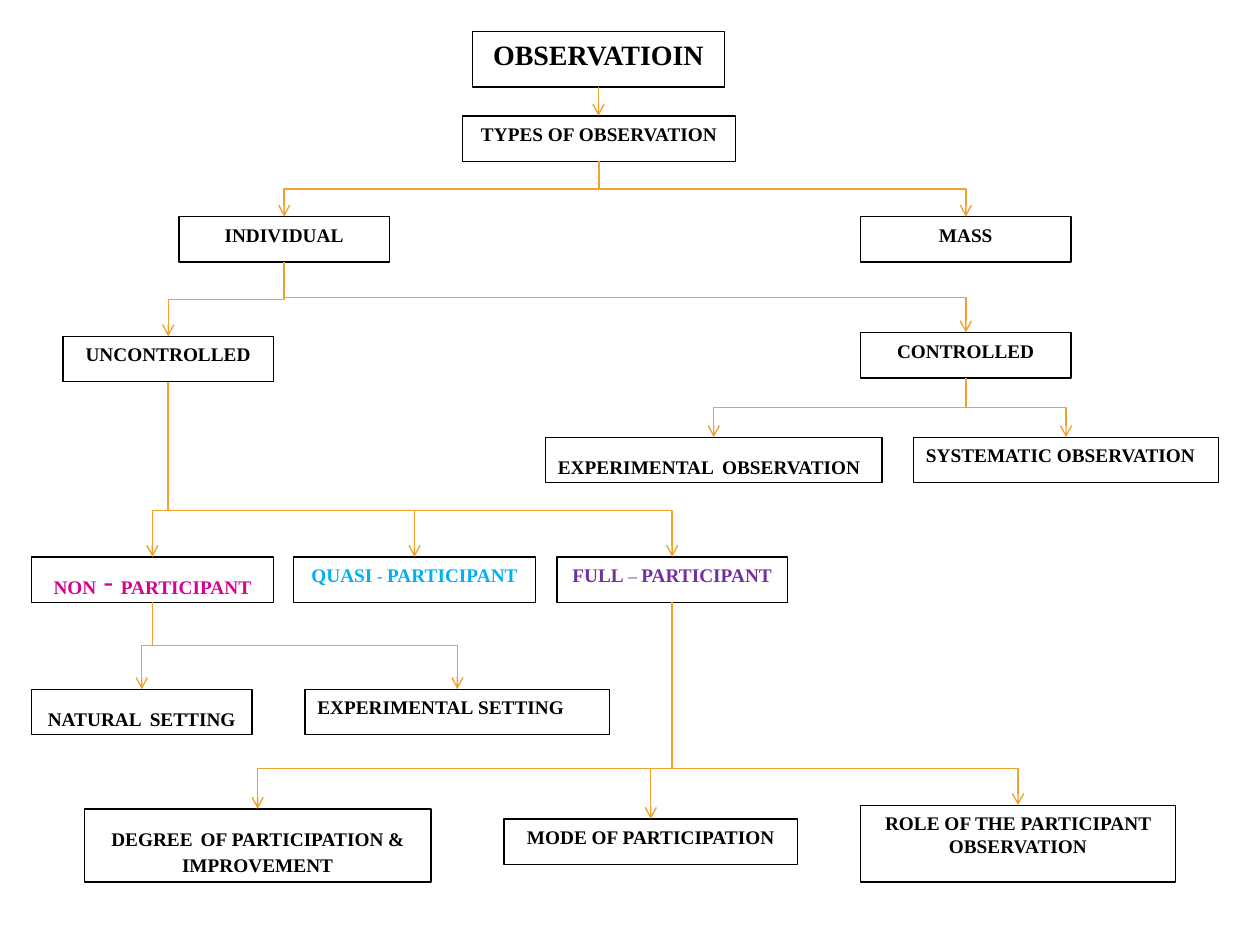
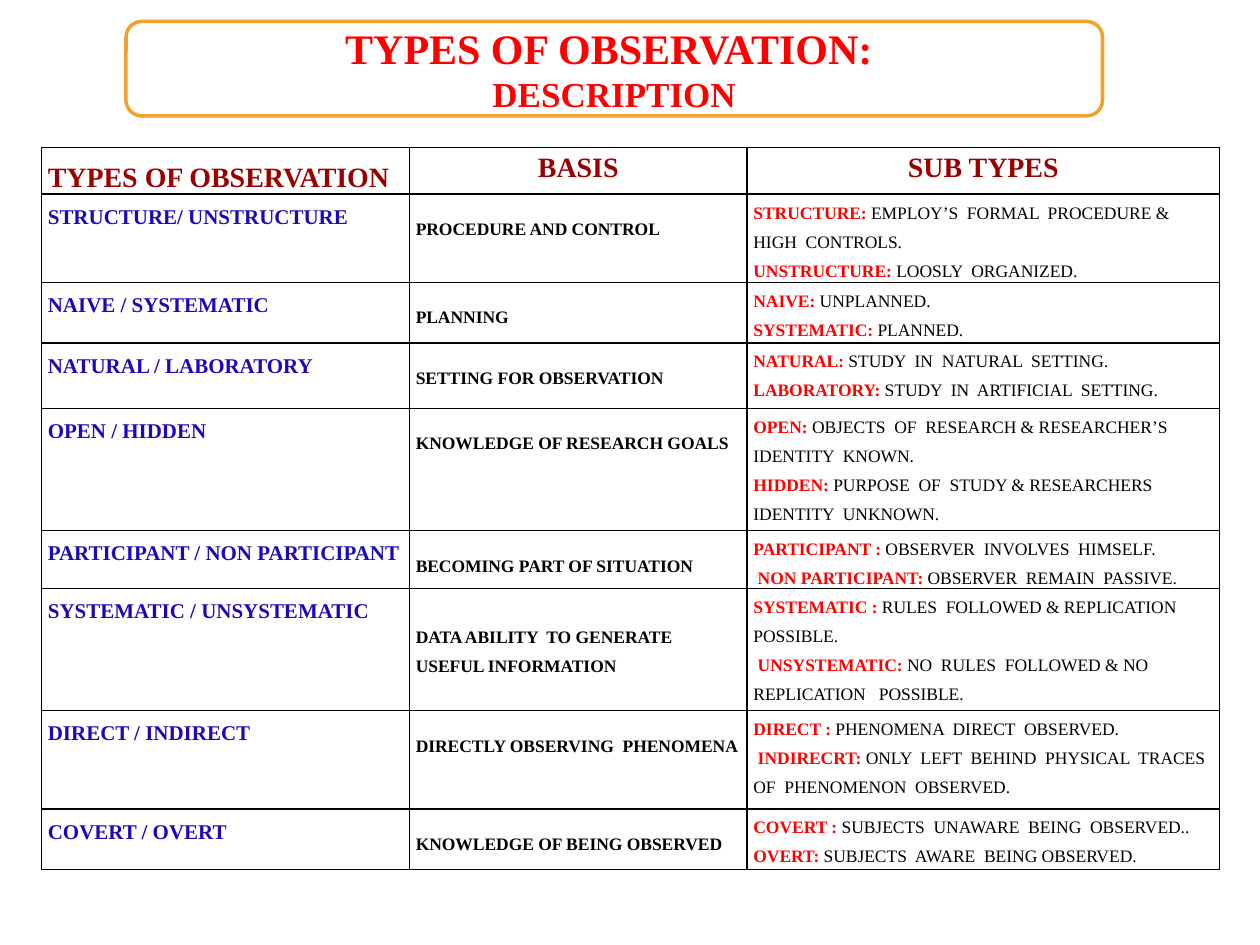
from lxml import etree
from pptx import Presentation
from pptx.dml.color import RGBColor
from pptx.enum.shapes import MSO_CONNECTOR as Connector, MSO_SHAPE as Shape
from pptx.enum.text import MSO_ANCHOR as Anchor, PP_ALIGN as Align
from pptx.oxml.ns import qn
from pptx.util import Inches, Pt

# Shared look
SERIF, SANS = "Times New Roman", "Roboto"
COLORS = {
    "black": "000000", "white": "FFFFFF", "orange": "F0A22E", "pink": "D60093",
    "cyan": "00B0F0", "purple": "7030A0", "maroon": "990000", "blue": "1D08B8",
    "red": "FF0000",
}

# Chart content: a run is a string or (text, format)
WIDE = {"size": 18, "font": SANS, "bold": False}
THIN = {"size": 10, "bold": False}
BOX_HEIGHT = 0.36
# name: left, top, width, runs, format of the box
BOXES = {
    "observation": (3.75, 0.25, 2, ["OBSERVATIOIN"], {"size": 16, "height": 0.44}),
    "types": (3.67, 0.92, 2.17, ["TYPES OF OBSERVATION"], {}),
    "individual": (1.42, 1.72, 1.67, ["INDIVIDUAL"], {}),
    "mass": (6.83, 1.72, 1.67, ["MASS"], {}),
    "uncontrolled": (0.5, 2.67, 1.67, ["UNCONTROLLED"], {}),
    "controlled": (6.83, 2.64, 1.67, ["CONTROLLED"], {}),
    "experimental": (4.33, 3.47, 2.67,
                     ["EXPERIMENTAL", (" ", WIDE), "OBSERVATION"],
                     {"align": Align.LEFT}),
    "systematic": (7.25, 3.47, 2.42, ["SYSTEMATIC OBSERVATION"],
                   {"align": Align.LEFT}),
    "non": (0.25, 4.42, 1.92, ["NON", (" - ", WIDE), "PARTICIPANT"],
            {"color": "pink"}),
    "quasi": (2.33, 4.42, 1.92, ["QUASI", (" - ", THIN), "PARTICIPANT"],
              {"color": "cyan"}),
    "full": (4.42, 4.42, 1.83, ["FULL", (" – ", THIN), "PARTICIPANT"],
             {"color": "purple"}),
    "natural": (0.25, 5.47, 1.75, ["NATURAL", (" ", WIDE), "SETTING"], {}),
    "setting": (2.42, 5.47, 2.42, ["EXPERIMENTAL", (" ", THIN), "SETTING"],
                {"align": Align.LEFT}),
    "degree": (0.67, 6.42, 2.75,
               ["DEGREE", (" ", WIDE), "OF", (" ", THIN), "PARTICIPATION",
                (" ", THIN), "&", (" ", WIDE), "IMPROVEMENT"], {"height": 0.58}),
    "mode": (4, 6.5, 2.33, ["MODE OF PARTICIPATION"], {}),
    "role": (6.83, 6.39, 2.5, ["ROLE OF THE PARTICIPANT OBSERVATION"],
             {"height": 0.61}),
}
# parent, children, height of the shared bend (None: halfway)
BRANCHES = [
    ("observation", ["types"], None),
    ("types", ["mass", "individual"], None),
    ("individual", ["controlled", "uncontrolled"], None),
    ("uncontrolled", ["full", "non", "quasi"], 4.05),
    ("controlled", ["systematic", "experimental"], None),
    ("non", ["setting", "natural"], None),
    ("full", ["mode", "degree", "role"], 6.1),
]

# Table content
TITLE_LINES = [("TYPES OF OBSERVATION: ", 24), ("DESCRIPTION", 20)]
HEADINGS = [("TYPES OF OBSERVATION", Align.LEFT, 1.5),
            ("BASIS", Align.CENTER, 1.15), ("SUB TYPES", Align.CENTER, 1.15)]
COLUMN_WIDTHS = [2.92, 2.68, 3.75]
HEADING_HEIGHT = 0.37
# row height, type, basis lines, (sub type, meaning) pairs
ROWS = [
    (0.7, "STRUCTURE/ UNSTRUCTURE", ["PROCEDURE AND CONTROL"],
     [("STRUCTURE: ", "EMPLOY’S  FORMAL  PROCEDURE & HIGH  CONTROLS."),
      ("UNSTRUCTURE: ", "LOOSLY  ORGANIZED.")]),
    (0.48, "NAIVE / SYSTEMATIC", ["PLANNING"],
     [("NAIVE: ", "UNPLANNED."), ("SYSTEMATIC: ", "PLANNED.")]),
    (0.52, "NATURAL / LABORATORY", ["SETTING FOR OBSERVATION"],
     [("NATURAL: ", "STUDY  IN  NATURAL  SETTING."),
      ("LABORATORY: ", "STUDY  IN  ARTIFICIAL  SETTING.")]),
    (0.97, "OPEN / HIDDEN", ["KNOWLEDGE OF RESEARCH GOALS"],
     [("OPEN: ", "OBJECTS  OF  RESEARCH & RESEARCHER’S IDENTITY  KNOWN."),
      ("HIDDEN: ", "PURPOSE  OF  STUDY & RESEARCHERS IDENTITY  UNKNOWN.")]),
    (0.45, "PARTICIPANT / NON PARTICIPANT", ["BECOMING PART OF SITUATION"],
     [("PARTICIPANT : ", "OBSERVER  INVOLVES  HIMSELF."),
      (" NON PARTICIPANT: ", "OBSERVER  REMAIN  PASSIVE.")]),
    (0.97, "SYSTEMATIC / UNSYSTEMATIC",
     ["DATA ABILITY  TO GENERATE", "USEFUL INFORMATION"],
     [("SYSTEMATIC : ", "RULES  FOLLOWED & REPLICATION POSSIBLE."),
      (" UNSYSTEMATIC: ", "NO  RULES  FOLLOWED & NO REPLICATION   POSSIBLE.")]),
    (0.78, "DIRECT / INDIRECT", ["DIRECTLY OBSERVING  PHENOMENA"],
     [("DIRECT : ", "PHENOMENA  DIRECT  OBSERVED."),
      (" INDIRECRT: ",
       "ONLY  LEFT  BEHIND  PHYSICAL  TRACES OF  PHENOMENON  OBSERVED.")]),
    (0.48, "COVERT / OVERT", ["KNOWLEDGE OF BEING OBSERVED"],
     [("COVERT : ", "SUBJECTS  UNAWARE  BEING  OBSERVED.."),
      ("OVERT: ", "SUBJECTS  AWARE  BEING OBSERVED.")]),
]


def rgb(name):
    return RGBColor.from_string(COLORS[name])


def write(frame, paragraphs, align=Align.LEFT, spacing=None, **base):
    """Fill a text frame; each paragraph is a list of runs."""
    for index, runs in enumerate(paragraphs):
        paragraph = frame.add_paragraph() if index else frame.paragraphs[0]
        paragraph.alignment = align
        if spacing:
            paragraph.line_spacing = spacing
        for item in runs:
            text, own = (item, {}) if isinstance(item, str) else item
            look = {"size": 11, "font": SERIF, "color": "black", "bold": True,
                    **base, **own}
            run = paragraph.add_run()
            run.text = text
            run.font.size = Pt(look["size"])
            run.font.name = look["font"]
            run.font.bold = look["bold"]
            run.font.color.rgb = rgb(look["color"])


def add_panel(slide, kind, left, top, width, height, line, weight):
    shape = slide.shapes.add_shape(kind, *map(Inches, (left, top, width, height)))
    shape.shadow.inherit = False
    shape.fill.solid()
    shape.fill.fore_color.rgb = rgb("white")
    shape.line.color.rgb = rgb(line)
    shape.line.width = Pt(weight)
    shape.text_frame.word_wrap = True
    shape.text_frame.vertical_anchor = Anchor.TOP
    return shape


def add_arrow(slide, start, end, bend):
    """Arrow that leaves downward, turns at height bend and ends downward."""
    (x1, y1), (x2, y2) = start, end
    drop, reach = y2 - y1, abs(x2 - x1)
    straight = reach < 0.02
    if straight:
        kind, points = Connector.STRAIGHT, (x1, y1, x1, y2)
    else:
        # Lay the elbow on its side about the midpoint, then turn it
        kind = Connector.ELBOW
        left, top = (x1 + x2 - drop) / 2, (y1 + y2 - reach) / 2
        ends = (left, left + drop) if x2 < x1 else (left + drop, left)
        points = (ends[0], top, ends[1], top + reach)
    connector = slide.shapes.add_connector(kind, *map(Inches, points))
    connector.line.color.rgb = rgb("orange")
    connector.line.width = Pt(0.79)
    properties = connector._element.spPr
    if not straight:
        degrees = 90 if x2 < x1 else 270
        properties.find(qn("a:xfrm")).set("rot", str(degrees * 60000))
        share = (bend - y1) / drop if bend else 0.5
        guides = properties.find(qn("a:prstGeom")).find(qn("a:avLst"))
        etree.SubElement(guides, qn("a:gd"), name="adj1",
                         fmla=f"val {round(share * 100000)}")
    etree.SubElement(properties.find(qn("a:ln")), qn("a:tailEnd"), type="arrow")
    etree.SubElement(properties, qn("a:effectLst"))


def style_cell(cell, top=0):
    cell.margin_left = cell.margin_right = Inches(0.05)
    cell.margin_top, cell.margin_bottom = Inches(top), 0
    cell.fill.background()
    properties = cell._tc.get_or_add_tcPr()
    for index, side in enumerate("LRTB"):
        border = etree.Element(qn(f"a:ln{side}"), w=str(Pt(1)))
        fill = etree.SubElement(border, qn("a:solidFill"))
        etree.SubElement(fill, qn("a:srgbClr"), val=COLORS["black"])
        properties.insert(index, border)


def build_chart_slide(slide):
    top_points, bottom_points = {}, {}
    for name, (left, top, width, runs, options) in BOXES.items():
        look = {"align": Align.CENTER, "height": BOX_HEIGHT, **options}
        height = look.pop("height")
        box = add_panel(slide, Shape.RECTANGLE, left, top, width, height,
                        "black", 0.75)
        write(box.text_frame, [runs], **look)
        center = left + width / 2
        top_points[name] = (center, top)
        bottom_points[name] = (center, top + height)
    for parent, children, bend in BRANCHES:
        for child in children:
            add_arrow(slide, bottom_points[parent], top_points[child], bend)


def build_table_slide(slide):
    # Table frame
    heights = [HEADING_HEIGHT] + [row[0] for row in ROWS]
    size = (sum(COLUMN_WIDTHS), sum(heights))
    table = slide.shapes.add_table(len(heights), len(COLUMN_WIDTHS),
                                   *map(Inches, (0.33, 1.17, *size))).table
    table.first_row = table.horz_banding = False
    for column, width in zip(table.columns, COLUMN_WIDTHS):
        column.width = Inches(width)
    for row, height in zip(table.rows, heights):
        row.height = Inches(height)

    # Heading row
    for cell, (text, align, spacing) in zip(table.rows[0].cells, HEADINGS):
        style_cell(cell)
        write(cell.text_frame, [[text]], align=align, spacing=spacing,
              size=16, color="maroon")

    # Body rows; the basis starts one line lower
    for index, (_, kind, basis, subtypes) in enumerate(ROWS, 1):
        kind_cell, basis_cell, subtype_cell = table.rows[index].cells
        basis_spacing = 1.5 if len(basis) > 1 else 1.15
        style_cell(kind_cell)
        write(kind_cell.text_frame, [[kind]], spacing=1.5, size=12, color="blue")
        style_cell(basis_cell, top=0.16 * basis_spacing)
        write(basis_cell.text_frame, [[line] for line in basis],
              spacing=basis_spacing, size=10)
        style_cell(subtype_cell)
        write(subtype_cell.text_frame,
              [[(label, {"color": "red"}), (meaning, {"bold": False})]
               for label, meaning in subtypes], spacing=1.5, size=10)

    # Title
    title = add_panel(slide, Shape.ROUNDED_RECTANGLE, 1, 0.17, 7.75, 0.75,
                      "orange", 2)
    title.text_frame.vertical_anchor = Anchor.MIDDLE
    write(title.text_frame, [[(text, {"size": size})] for text, size in TITLE_LINES],
          align=Align.CENTER, color="red")


def main():
    presentation = Presentation()
    presentation.slide_width, presentation.slide_height = Inches(10), Inches(7.5)
    for build in (build_chart_slide, build_table_slide):
        build(presentation.slides.add_slide(presentation.slide_layouts[6]))
    presentation.save("out.pptx")


if __name__ == "__main__":
    main()
